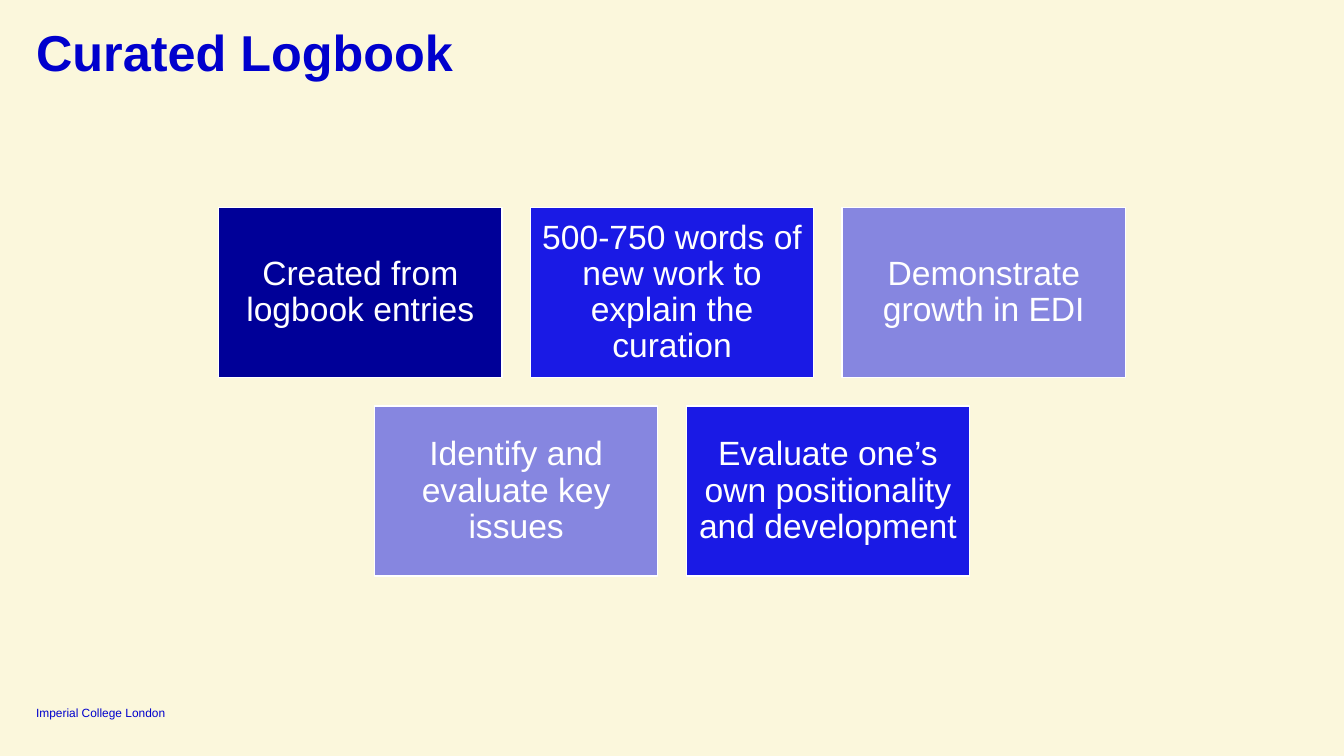
from dataclasses import dataclass

from pptx import Presentation
from pptx.dml.color import RGBColor
from pptx.enum.shapes import MSO_SHAPE
from pptx.enum.text import MSO_ANCHOR, MSO_AUTO_SIZE, PP_ALIGN
from pptx.util import Cm, Pt


@dataclass(frozen=True)
class Theme:
    """Colours, font and type sizes of the deck."""
    paper: str = "FBF7DC"
    ink: str = "0000CD"
    white: str = "FFFFFF"
    navy: str = "000098"
    blue: str = "1A1AE5"
    lilac: str = "8686E0"
    font: str = "Arial"
    head: float = 36
    body: float = 24
    foot: float = 8.5


THEME = Theme()
ROWS = [
    [("Created from logbook entries", THEME.navy),
     ("500-750 words of new work to explain the curation", THEME.blue),
     ("Demonstrate growth in EDI", THEME.lilac)],
    [("Identify and evaluate key issues", THEME.lilac),
     ("Evaluate one’s own positionality and development", THEME.blue)],
]


def tint(code):
    """Turn a hex code into a colour."""
    return RGBColor.from_string(code)


def write(shape, text, size, color, align, anchor, inset=0, bold=False, lead=1.0):
    """Set and format the one paragraph of a shape."""
    frame = shape.text_frame
    frame.text = text
    frame.word_wrap = True
    frame.auto_size = MSO_AUTO_SIZE.NONE
    frame.vertical_anchor = anchor
    frame.margin_left = frame.margin_right = Cm(inset)
    frame.margin_top = frame.margin_bottom = Cm(inset)
    para = frame.paragraphs[0]
    para.alignment = align
    para.line_spacing = lead
    font = para.runs[0].font
    font.name, font.size, font.bold = THEME.font, Pt(size), bold
    font.color.rgb = tint(color)


def add_title(slide, left, top, width, height):
    """Place the slide title in the given box."""
    title = slide.shapes.title
    title.left, title.top = Cm(left), Cm(top)
    title.width, title.height = Cm(width), Cm(height)
    write(title, "Curated Logbook", THEME.head, THEME.ink,
          PP_ALIGN.LEFT, MSO_ANCHOR.TOP, bold=True, lead=0.9)


def add_foot(slide, left, top, width, height):
    """Place the college name in the given box."""
    foot = slide.shapes.add_textbox(Cm(left), Cm(top), Cm(width), Cm(height))
    write(foot, "Imperial College London", THEME.foot, THEME.ink,
          PP_ALIGN.LEFT, MSO_ANCHOR.BOTTOM)


def add_tile(slide, left, top, width, height, text, fill):
    """Draw one filled tile with centred text."""
    tile = slide.shapes.add_shape(
        MSO_SHAPE.RECTANGLE, Cm(left), Cm(top), Cm(width), Cm(height))
    tile.shadow.inherit = False
    tile.fill.solid()
    tile.fill.fore_color.rgb = tint(fill)
    tile.line.color.rgb = tint(THEME.white)
    tile.line.width = Pt(1)
    write(tile, text, THEME.body, THEME.white,
          PP_ALIGN.CENTER, MSO_ANCHOR.MIDDLE, inset=0.25, lead=0.9)


def add_tiles(slide, left, top, width, height, gap=0.72):
    """Fill the given box with rows of equal tiles, each row centred."""
    most = max(len(row) for row in ROWS)
    wide = (width - gap * (most - 1)) / most
    high = (height - gap * (len(ROWS) - 1)) / len(ROWS)
    for line, row in enumerate(ROWS):
        start = left + (most - len(row)) * (wide + gap) / 2
        for col, (text, fill) in enumerate(row):
            add_tile(slide, start + col * (wide + gap),
                     top + line * (high + gap), wide, high, text, fill)


def main():
    """Build and save the slide."""
    deck = Presentation()
    deck.slide_width, deck.slide_height = Cm(33.87), Cm(19.05)
    slide = deck.slides.add_slide(deck.slide_layouts[5])
    slide.background.fill.solid()
    slide.background.fill.fore_color.rgb = tint(THEME.paper)
    add_foot(slide, 0.91, 17.75, 3.94, 0.38)
    add_title(slide, 0.91, 0.71, 32.05, 1.04)
    add_tiles(slide, 5.51, 5.23, 22.85, 9.29)
    deck.save("out.pptx")


if __name__ == "__main__":
    main()
